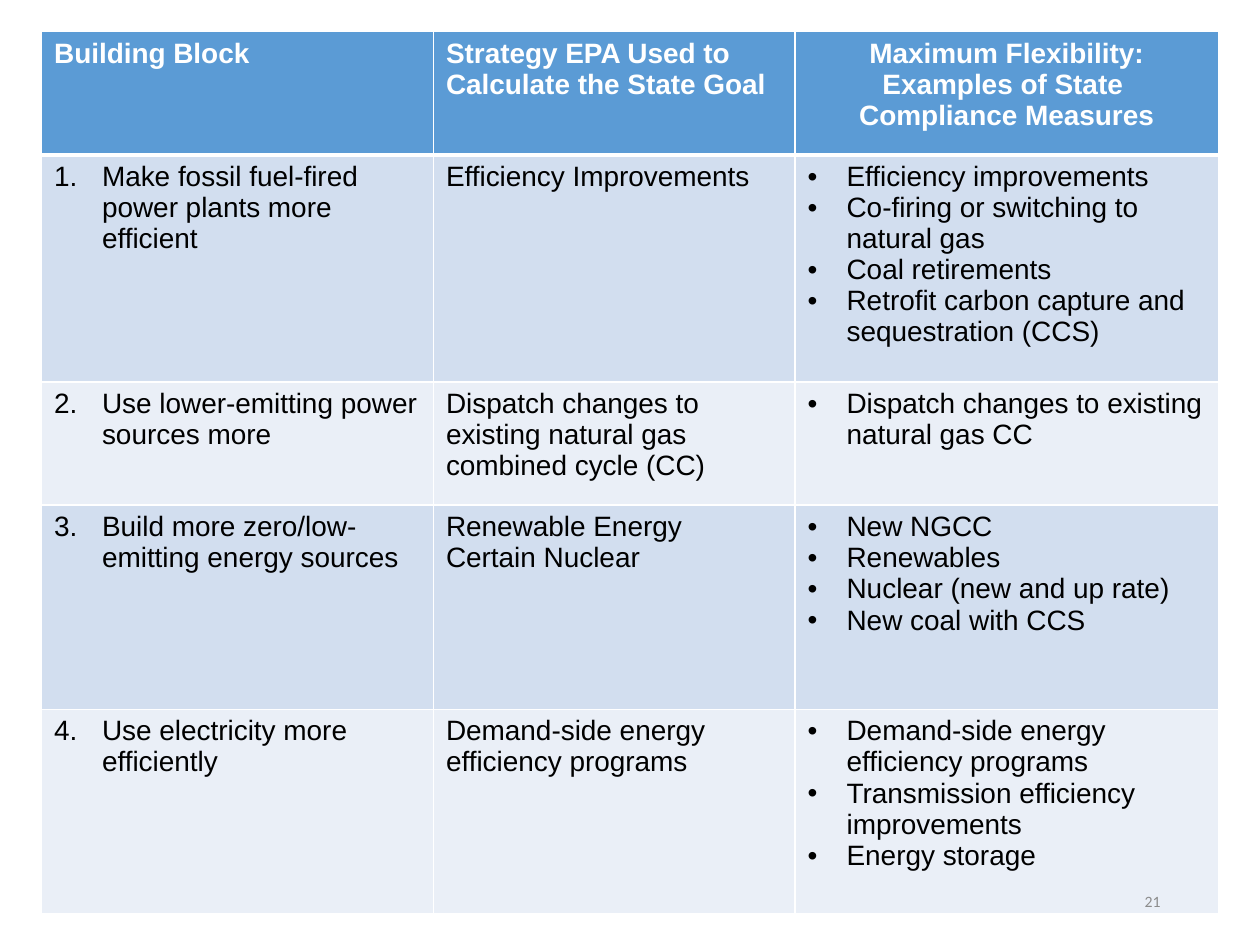
"""Slide with a table of building blocks, goal strategies and compliance measures."""
from lxml import etree
from pptx import Presentation
from pptx import util as u
from pptx.dml.color import RGBColor
from pptx.enum import text
from pptx.oxml.ns import qn

HEADER = [
    ["Building Block"],
    ["Strategy EPA Used to Calculate the State Goal"],
    ["Maximum Flexibility:", "Examples of State ", "Compliance Measures"],
]
ROWS = [
    (["Make fossil fuel-fired power plants more efficient"],
     ["Efficiency Improvements"],
     ["Efficiency improvements", "Co-firing or switching to natural gas",
      "Coal retirements", "Retrofit carbon capture and sequestration (CCS)"]),
    (["Use lower-emitting power sources more"],
     ["Dispatch changes to existing natural gas combined cycle (CC)"],
     ["Dispatch changes to existing natural gas CC"]),
    (["Build more zero/low-emitting energy sources"],
     ["Renewable Energy", "Certain Nuclear"],
     ["New NGCC", "Renewables", "Nuclear (new and up rate)", "New coal with CCS"]),
    (["Use electricity more efficiently"],
     ["Demand-side energy efficiency programs"],
     ["Demand-side energy efficiency programs",
      "Transmission efficiency improvements", "Energy storage"]),
]
PAGE = "21"
WIDTHS = [3.11, 2.87, 3.36]
HEIGHTS = [0.98, 1.8, 0.98, 1.62, 1.62]
LEFT, TOP = 0.33, 0.25
BLUE, BANDS = "5B9BD5", ["D2DEEF", "EAEFF7"]
WHITE, BLACK, GREY = "FFFFFF", "000000", "8C8C8C"


def rgb(value):
    return RGBColor.from_string(value)


def add_run(p, words, size, font, color, bold=False):
    r = p.add_run()
    r.text = words
    r.font.size, r.font.name, r.font.bold = u.Pt(size), font, bold
    r.font.color.rgb = rgb(color)


def add_bullet(p, indent, tag, **attrs):
    pPr = p._p.get_or_add_pPr()
    pPr.set("marL", str(u.Inches(indent)))
    pPr.set("indent", str(-u.Inches(indent)))
    etree.SubElement(pPr, qn("a:buFont"), typeface="Arial")
    etree.SubElement(pPr, qn(tag), **attrs)


def add_borders(cell, top, bottom):
    tcPr = cell._tc.get_or_add_tcPr()
    for side, width in zip("LRTB", (1, 1, top, bottom)):
        ln = etree.SubElement(tcPr, qn("a:ln" + side), w=str(u.Pt(width)))
        fill = etree.SubElement(ln, qn("a:solidFill"))
        etree.SubElement(fill, qn("a:srgbClr"), val=WHITE)


def fill_cell(cell, row, col, lines):
    header = row == 0
    add_borders(cell, 3 if row == 1 else 1, 3 if header else 1)
    cell.fill.solid()
    cell.fill.fore_color.rgb = rgb(BLUE if header else BANDS[(row - 1) % 2])
    tf = cell.text_frame
    for i, line in enumerate(lines):
        p = tf.add_paragraph() if i else tf.paragraphs[0]
        if header and col == 2:
            p.alignment = text.PP_ALIGN.CENTER
        elif not header and col == 0:
            add_bullet(p, 0.38, "a:buAutoNum", type="arabicPeriod", startAt=str(row))
        elif not header and col == 2:
            add_bullet(p, 0.31, "a:buChar", char="•")
        add_run(p, line, 16, "Arial", WHITE if header else BLACK, header)


def add_table(slide):
    grid = [HEADER, *ROWS]
    table = slide.shapes.add_table(
        len(grid), len(WIDTHS), u.Inches(LEFT), u.Inches(TOP),
        u.Inches(sum(WIDTHS)), u.Inches(sum(HEIGHTS))).table
    for column, width in zip(table.columns, WIDTHS):
        column.width = u.Inches(width)
    for r, (height, cells) in enumerate(zip(HEIGHTS, grid)):
        table.rows[r].height = u.Inches(height)
        for c, lines in enumerate(cells):
            fill_cell(table.cell(r, c), r, c, lines)


def add_page_number(slide):
    sp = slide.shapes.add_textbox(*map(u.Inches, (7.06, 6.95, 2.25, 0.4)))
    tf = sp.text_frame
    tf.word_wrap = True
    tf.vertical_anchor = text.MSO_ANCHOR.MIDDLE
    p = tf.paragraphs[0]
    p.alignment = text.PP_ALIGN.RIGHT
    add_run(p, PAGE, 9, "Calibri", GREY)


def main():
    prs = Presentation()
    prs.slide_width, prs.slide_height = u.Inches(10), u.Inches(7.5)
    slide = prs.slides.add_slide(prs.slide_layouts[6])
    add_table(slide)
    add_page_number(slide)
    prs.save("out.pptx")


if __name__ == "__main__":
    main()
